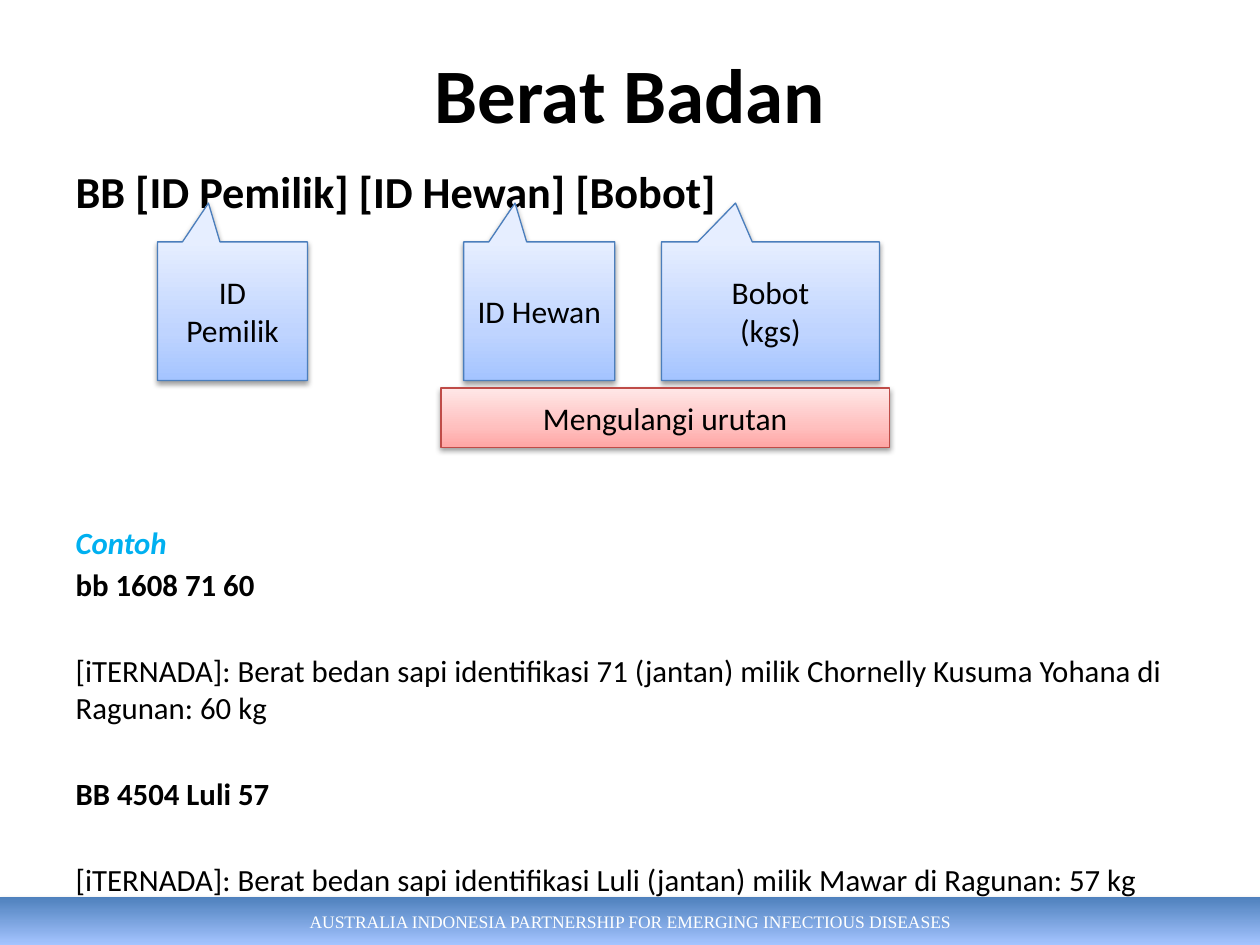
from lxml import etree
from pptx import Presentation
from pptx import util as u
from pptx.dml.color import RGBColor
from pptx.enum import shapes, text
from pptx.oxml import parse_xml
from pptx.oxml.ns import nsdecls, qn


def write(paragraph, wording, size, color="000000", font="Calibri", bold=False, italic=False):
    run = paragraph.add_run()
    run.text = wording
    run.font.name = font
    run.font.size = u.Pt(size)
    run.font.bold = bold
    run.font.italic = italic
    run.font.color.rgb = RGBColor.from_string(color)


def add_panel(kind, box, stops, angle, border, alpha, distance):
    panel = slide.shapes.add_shape(kind, *map(u.Inches, box))
    properties = panel._element.spPr
    stop_xml = "".join(
        f'<a:gs pos="{pos * 1000}"><a:srgbClr val="{color}"/></a:gs>' for pos, color in stops)
    properties.append(parse_xml(
        f'<a:gradFill {nsdecls("a")} rotWithShape="1"><a:gsLst>{stop_xml}</a:gsLst>'
        f'<a:lin ang="{angle * 60000}" scaled="0"/></a:gradFill>'))
    if border:
        panel.line.color.rgb = RGBColor.from_string(border)
        panel.line.width = u.Pt(0.75)
    else:
        panel.line.fill.background()
    properties.append(parse_xml(
        f'<a:effectLst {nsdecls("a")}><a:outerShdw blurRad="{u.Pt(3.1)}" dist="{u.Pt(distance)}" '
        f'dir="5400000" rotWithShape="0"><a:srgbClr val="000000"><a:alpha val="{alpha * 1000}"/>'
        '</a:srgbClr></a:outerShdw></a:effectLst>'))
    panel.text_frame.word_wrap = True
    panel.text_frame.vertical_anchor = text.MSO_ANCHOR.MIDDLE
    panel.text_frame.paragraphs[0].alignment = text.PP_ALIGN.CENTER
    return panel


deck = Presentation()
deck.slide_width, deck.slide_height = u.Inches(10), u.Inches(7.5)
slide = deck.slides.add_slide(deck.slide_layouts[1])

title = slide.shapes.title
title.left, title.top, title.width, title.height = map(u.Inches, (0.5, 0.3, 9, 0.87))
title.text_frame.vertical_anchor = text.MSO_ANCHOR.MIDDLE
title.text_frame.paragraphs[0].alignment = text.PP_ALIGN.CENTER
write(title.text_frame.paragraphs[0], "Berat Badan", 44, bold=True)

body = slide.placeholders[1]
body.left, body.top, body.width, body.height = map(u.Inches, (0.5, 1.25, 9, 5.92))
body.text_frame.auto_size = text.MSO_AUTO_SIZE.NONE
body.text_frame.word_wrap = True
messages = [
    ("BB [ID Pemilik] [ID Hewan] [Bobot]", 0, 25.3, "000000", True, False),
    ("Contoh", 175, 17.6, "00B0F0", True, True),
    ("bb 1608 71 60", 3, 17.6, "000000", True, False),
    ("[iTERNADA]: Berat bedan sapi identifikasi 71 (jantan) milik Chornelly Kusuma Yohana "
     "di Ragunan: 60 kg", 28, 17.6, "000000", False, False),
    ("BB 4504 Luli 57", 28, 17.6, "000000", True, False),
    ("[iTERNADA]: Berat bedan sapi identifikasi Luli (jantan) milik Mawar di Ragunan: 57 kg",
     28, 17.6, "000000", False, False),
]
for number, (wording, gap, size, color, bold, italic) in enumerate(messages):
    line = body.text_frame.add_paragraph() if number else body.text_frame.paragraphs[0]
    line.space_before = u.Pt(gap)
    layout = line._p.get_or_add_pPr()
    layout.set("marL", "0")
    layout.set("indent", "0")
    etree.SubElement(layout, qn("a:buNone"))
    write(line, wording, size, color, bold=bold, italic=italic)

footer = add_panel(shapes.MSO_SHAPE.RECTANGLE, (0, 7.12, 10, 0.38),
                   [(0, "4F81BD"), (100, "A4C4FF")], 90, None, 35, 1.8)
write(footer.text_frame.paragraphs[0],
      "AUSTRALIA INDONESIA PARTNERSHIP FOR EMERGING INFECTIOUS DISEASES",
      10, "FFFFFF", "Times New Roman")
slide.shapes._spTree.insert(2, footer._element)

blues = [(0, "A4C4FF"), (35, "BFD4FF"), (100, "E6EEFF")]
fields = [(1.25, 1.19, ["ID Pemilik"]), (3.68, 1.2, ["ID Hewan"]), (5.25, 1.73, ["Bobot", "(kgs)"])]
for left, width, labels in fields:
    callout = add_panel(shapes.MSO_SHAPE.RECTANGULAR_CALLOUT, (left, 1.92, width, 1.1),
                        blues, 270, "4B7EBC", 38, 1.6)
    callout.adjustments[0], callout.adjustments[1] = -0.16, -0.78
    for number, label in enumerate(labels):
        line = callout.text_frame.add_paragraph() if number else callout.text_frame.paragraphs[0]
        line.alignment = text.PP_ALIGN.CENTER
        write(line, label, 18)

repeat = add_panel(shapes.MSO_SHAPE.RECTANGLE, (3.5, 3.08, 3.56, 0.47),
                   [(0, "FFA6A5"), (35, "FFC0BF"), (100, "FFE7E7")], 270, "BF4C48", 38, 1.6)
write(repeat.text_frame.paragraphs[0], "Mengulangi urutan", 18)

deck.save("out.pptx")
